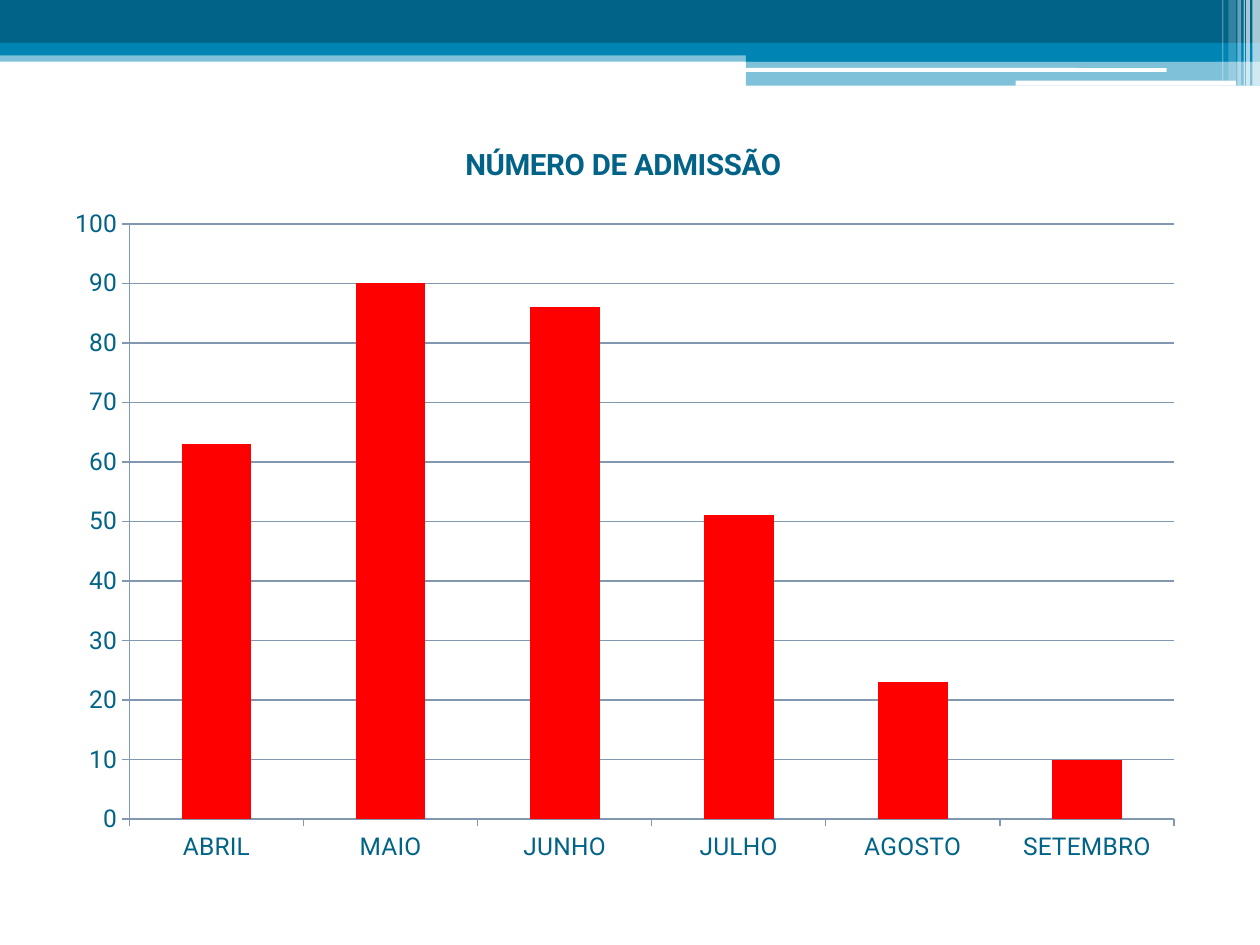
from lxml import etree
from pptx import Presentation
from pptx.chart.data import CategoryChartData
from pptx.dml.color import RGBColor
from pptx.enum.chart import XL_CHART_TYPE, XL_TICK_MARK
from pptx.enum.shapes import MSO_SHAPE
from pptx.oxml import parse_xml
from pptx.oxml.ns import nsdecls, qn
from pptx.util import Inches, Pt

RECT, ROUND = MSO_SHAPE.RECTANGLE, MSO_SHAPE.ROUNDED_RECTANGLE
COLUMN, OUT = XL_CHART_TYPE.COLUMN_CLUSTERED, XL_TICK_MARK.OUTSIDE
DARK, BLUE, WHITE, RED, GRID = "006387", "0084B4", "FFFFFF", "FF0000", "8297B0"
FONT = "Roboto"

# Header parts: shape, (left, top, width, height), colour, opacity in percent
BANDS = [
    (RECT, (0, 0.4, 10, 0.09), BLUE, 50),
    (RECT, (0, 0, 10, 0.34), DARK, 100),
    (RECT, (0, 0.34, 10, 0.1), BLUE, 100),
    (RECT, (5.92, 0.39, 4.08, 0.1), BLUE, 100),
    (RECT, (5.92, 0.48, 4.08, 0.2), BLUE, 50),
    (ROUND, (5.91, 0.54, 3.35, 0.03), WHITE, 100),
    (ROUND, (8.06, 0.64, 1.75, 0.04), WHITE, 100),
]
# Stripes at the right edge: left, width, height, opacity
STRIPES = [
    (9.94, 0.06, 0.68, 65),
    (9.89, 0.03, 0.68, 65),
    (9.87, 0.01, 0.68, 60),
    (9.82, 0.03, 0.68, 40),
    (9.75, 0.06, 0.64, 20),
    (9.7, 0.01, 0.64, 30),
]
TITLE = "NÚMERO DE ADMISSÃO"
COUNTS = {"ABRIL": 63, "MAIO": 90, "JUNHO": 86,
          "JULHO": 51, "AGOSTO": 23, "SETEMBRO": 10}
CHART = (0.39, 0.94, 9.11, 5.98)
PLOT = {"x": 0.07, "y": 0.14, "w": 0.91, "h": 0.79}  # shares of the chart
SCALE = {"minimum_scale": 0, "maximum_scale": 100, "major_unit": 10,
         "has_major_gridlines": True}


def color(code):
    return RGBColor.from_string(code)


def add_band(slide, kind, box, code, alpha):
    band = slide.shapes.add_shape(kind, *map(Inches, box))
    band.shadow.inherit = False
    band.line.fill.background()
    band.fill.solid()
    band.fill.fore_color.rgb = color(code)
    if alpha < 100:
        fill = band.fill._xPr.find(qn("a:solidFill"))
        etree.SubElement(fill[0], qn("a:alpha")).set("val", str(alpha * 1000))


def set_font(font, size, bold):
    for name, value in {"name": FONT, "size": Pt(size), "bold": bold}.items():
        setattr(font, name, value)
    font.color.rgb = color(DARK)


def set_line(line):
    line.color.rgb = color(GRID)
    line.width = Pt(0.75)


def place_plot(chart):
    area = chart._chartSpace.chart.plotArea
    for old in area.findall(qn("c:layout")):
        area.remove(old)
    modes = "".join(f'<c:{k}Mode val="edge"/>' for k in "xy")
    sizes = "".join(f'<c:{k} val="{v}"/>' for k, v in PLOT.items())
    area.insert(0, parse_xml(
        f'<c:layout {nsdecls("c")}><c:manualLayout><c:layoutTarget val="inner"/>'
        f"{modes}{sizes}</c:manualLayout></c:layout>"))


def add_chart(slide):
    data = CategoryChartData()
    data.categories = list(COUNTS)
    data.add_series(TITLE, list(COUNTS.values()))
    chart = slide.shapes.add_chart(COLUMN, *map(Inches, CHART), data).chart
    set_font(chart.font, 14, False)
    chart.has_legend = False

    # Title
    chart.has_title = True
    frame = chart.chart_title.text_frame
    frame.text = TITLE
    set_font(frame.paragraphs[0].runs[0].font, 16.8, True)
    chart.chart_title.include_in_layout = False

    # Columns
    plot = chart.plots[0]
    plot.gap_width = 150
    plot.vary_by_categories = False
    fill = plot.series[0].format.fill
    fill.solid()
    fill.fore_color.rgb = color(RED)

    # Axes
    for axis in (chart.category_axis, chart.value_axis):
        axis.major_tick_mark = OUT
        set_line(axis.format.line)
    for name, value in SCALE.items():
        setattr(chart.value_axis, name, value)
    set_line(chart.value_axis.major_gridlines.format.line)
    place_plot(chart)


def main():
    deck = Presentation()
    deck.slide_width, deck.slide_height = Inches(10), Inches(7.5)
    slide = deck.slides.add_slide(deck.slide_layouts[6])
    for band in BANDS:
        add_band(slide, *band)
    for left, width, height, alpha in STRIPES:
        add_band(slide, RECT, (left, 0, width, height), WHITE, alpha)
    add_chart(slide)
    deck.save("out.pptx")


if __name__ == "__main__":
    main()
